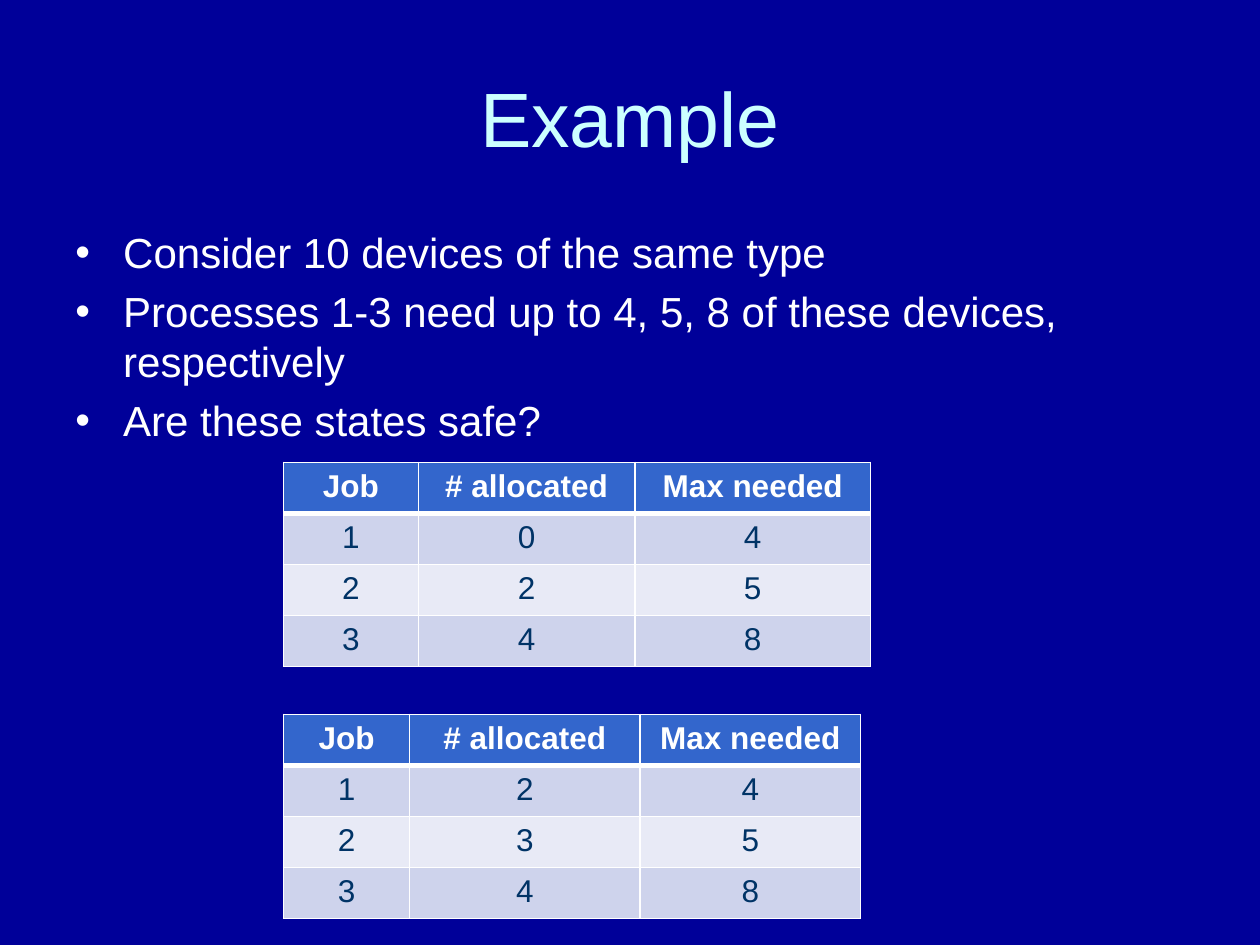
from lxml import etree
from pptx import Presentation, util as u
from pptx.dml import color
from pptx.enum import text
from pptx.oxml import ns

WIDE, HIGH = 10, 7.5
EDGE = 0.05 * WIDE
ROW = 0.054 * HIGH
HEAD = ["Job", "# allocated", "Max needed"]
NEEDS = [4, 5, 8]
POINTS = [
    "Consider 10 devices of the same type",
    "Processes 1-3 need up to 4, 5, 8 of these devices, respectively",
    "Are these states safe?",
]
STATES = [
    (3.67, [1.07, 1.72, 1.87], [0, 2, 4]),
    (5.67, [1, 1.83, 1.75], [2, 3, 4]),
]


def paint(item, tone):
    """Give a fill a solid colour from a hex string."""
    item.solid()
    item.fore_color.rgb = color.RGBColor.from_string(tone)


def style(para, size, tone, bold=False, align=text.PP_ALIGN.CENTER):
    """Format a paragraph and its runs."""
    para.alignment = align
    for run in para.runs:
        font = run.font
        font.name, font.size, font.bold = "Arial", u.Pt(size), bold
        paint(font.fill, tone)


def add_box(slide, top, height, anchor):
    """Add a wrapping text box across the slide and return its frame."""
    box = slide.shapes.add_textbox(
        *map(u.Inches, (EDGE, top, WIDE - 2 * EDGE, height)))
    frame = box.text_frame
    frame.word_wrap = True
    frame.vertical_anchor = anchor
    return frame


def add_title(slide, words):
    """Add the centred title."""
    frame = add_box(slide, 0.04 * HIGH, HIGH / 6, text.MSO_ANCHOR.MIDDLE)
    frame.text = words
    style(frame.paragraphs[0], 44, "CCFFFF")


def add_points(slide, lines):
    """Add the bulleted list."""
    frame = add_box(slide, 1.75, 0.66 * HIGH, text.MSO_ANCHOR.TOP)
    frame.text = "\n".join(lines)
    for para in frame.paragraphs:
        style(para, 24, "FFFFFF", align=text.PP_ALIGN.LEFT)
        para.space_before = u.Pt(4.8)
        props = para._p.get_or_add_pPr()
        props.set("marL", str(u.Inches(0.38)))
        props.set("indent", str(u.Inches(-0.38)))
        etree.SubElement(props, ns.qn("a:buFont")).set("typeface", "Arial")
        etree.SubElement(props, ns.qn("a:buChar")).set("char", "•")


def add_rules(cell, row):
    """Draw white cell borders, thick between head and body."""
    widths = {"L": 1, "R": 1, "T": 3 if row == 1 else 1, "B": 3 if row == 0 else 1}
    props = cell._tc.get_or_add_tcPr()
    for side, width in widths.items():
        line = etree.SubElement(props, ns.qn(f"a:ln{side}"), w=str(u.Pt(width)))
        fill = etree.SubElement(line, ns.qn("a:solidFill"))
        etree.SubElement(fill, ns.qn("a:srgbClr"), val="FFFFFF")


def add_state(slide, top, widths, held):
    """Add a table of devices held and needed by each job."""
    rows = [HEAD, *zip(range(1, len(held) + 1), held, NEEDS)]
    table = slide.shapes.add_table(
        len(rows), len(HEAD),
        *map(u.Inches, (0.225 * WIDE, top, sum(widths), ROW * len(rows)))).table
    for col, width in zip(table.columns, widths):
        col.width = u.Inches(width)
    for r, row in enumerate(rows):
        back = "3366CC" if r == 0 else ("E8EAF6", "CED3EC")[r % 2]
        for c, value in enumerate(row):
            cell = table.cell(r, c)
            cell.text_frame.text = str(value)
            style(cell.text_frame.paragraphs[0], 18,
                  "003366" if r else "FFFFFF", bold=r == 0)
            add_rules(cell, r)
            paint(cell.fill, back)


def main():
    """Build and save the slide."""
    deck = Presentation()
    deck.slide_width, deck.slide_height = u.Inches(WIDE), u.Inches(HIGH)
    slide = deck.slides.add_slide(deck.slide_layouts[6])
    paint(slide.background.fill, "000099")
    add_title(slide, "Example")
    add_points(slide, POINTS)
    for state in STATES:
        add_state(slide, *state)
    deck.save("out.pptx")


if __name__ == "__main__":
    main()
